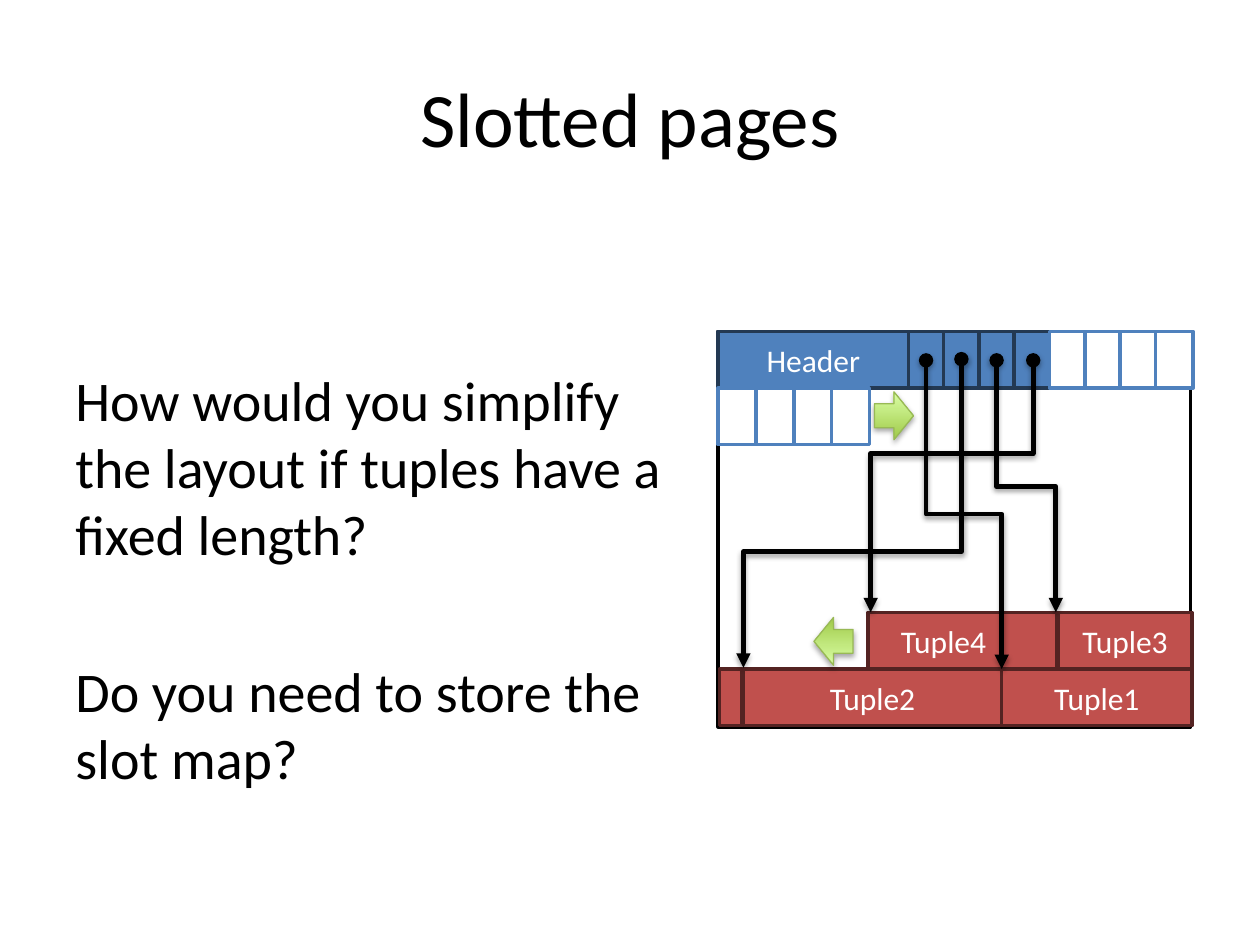
from lxml.etree import SubElement
from pptx import Presentation
from pptx.dml.color import RGBColor
from pptx.enum.shapes import MSO_CONNECTOR as Connector, MSO_SHAPE as Shape
from pptx.enum.text import MSO_ANCHOR as Anchor, PP_ALIGN as Align
from pptx.oxml.ns import qn
from pptx.util import Inches, Pt

COLORS = {
    "black": "000000", "white": "FFFFFF",
    "blue": "4F81BD", "navy": "233953",
    "red": "C0504D", "maroon": "542322",
    "green": "A0CA4A", "lime": "DAFFA5", "olive": "98B955",
}
FONT = "Calibri"
TITLE = "Slotted pages"
QUESTIONS = [
    "How would you simplify the layout if tuples have a fixed length?",
    "Do you need to store the slot map?",
]

PAGE_LEFT, PAGE_TOP, PAGE_WIDTH, PAGE_HEIGHT = 5.7, 2.63, 3.75, 3.14
ROW = 0.45
SLOT_WIDTH = 0.3
SLOT_ROWS = [
    (7.21, PAGE_TOP, 0.28, ["used"] * 4 + ["free"] * 4),
    (PAGE_LEFT, PAGE_TOP + ROW, 0.3, ["free"] * 4),
]
SLOT_STYLES = {"used": ("blue", "navy"), "free": ("white", "blue")}
LAST_ROW = 5.31
TUPLES = [
    ("Tuple1", 7.95, LAST_ROW, 1.51),
    ("Tuple2", 5.9, LAST_ROW, 2.05),
    ("Tuple3", 8.4, LAST_ROW - ROW, 1.06),
    ("Tuple4", 6.89, LAST_ROW - ROW, 1.5),
    ("", 5.71, LAST_ROW, 0.18),
]
POINTERS = [
    ((7.35, 2.86), 4.08, (7.95, 5.31)),
    ((7.63, 2.85), 4.38, (5.9, 5.3)),
    ((7.91, 2.86), 3.86, (8.38, 4.86)),
    ((8.2, 2.86), 3.6, (6.91, 4.86)),
]
GROWTH_ARROWS = [(6.94, 3.11, 0), (6.46, 4.9, 180)]


def color(name):
    return RGBColor.from_string(COLORS[name])


def style_text(paragraph, size, name, align):
    paragraph.alignment = align
    for run in paragraph.runs:
        run.font.name = FONT
        run.font.size = Pt(size)
        run.font.color.rgb = color(name)


def add_text(slide, place, paragraphs, size, anchor, align, gap=0):
    frame = slide.shapes.add_textbox(*map(Inches, place)).text_frame
    frame.word_wrap = True
    frame.vertical_anchor = anchor
    frame.text = "\n".join(paragraphs)
    for index, paragraph in enumerate(frame.paragraphs):
        style_text(paragraph, size, "black", align)
        if index:
            paragraph.space_before = Pt(gap)


def add_box(slide, left, top, width, height, fill, line, label=""):
    box = slide.shapes.add_shape(Shape.RECTANGLE, *map(Inches, (left, top, width, height)))
    box.shadow.inherit = False
    box.fill.solid()
    box.fill.fore_color.rgb = color(fill)
    box.line.color.rgb = color(line)
    box.line.width = Pt(2)
    if label:
        box.text_frame.text = label
        box.text_frame.vertical_anchor = Anchor.MIDDLE
        style_text(box.text_frame.paragraphs[0], 18, "white", Align.CENTER)
    return box


def add_shadow(properties, opacity, distance):
    effects = SubElement(properties, qn("a:effectLst"))
    shadow = SubElement(effects, qn("a:outerShdw"), blurRad=str(Pt(3.1)),
                        dist=str(Pt(distance)), dir="5400000", rotWithShape="0")
    shade = SubElement(shadow, qn("a:srgbClr"), val=COLORS["black"])
    SubElement(shade, qn("a:alpha"), val=str(opacity * 1000))


def add_pointer(slide, start, bend, end):
    (x1, y1), (x2, y2) = start, end
    length, span = y2 - y1, abs(x2 - x1)
    left, right = (x1 + x2 - length) / 2, (x1 + x2 + length) / 2
    top, bottom = (y1 + y2 - span) / 2, (y1 + y2 + span) / 2
    if x2 > x1:
        left, right, turn = right, left, 270
    else:
        turn = 90
    pointer = slide.shapes.add_connector(
        Connector.ELBOW, *map(Inches, (left, top, right, bottom)))
    pointer.line.color.rgb = color("black")
    pointer.line.width = Pt(2.75)
    properties = pointer._element.spPr
    properties.find(qn("a:xfrm")).set("rot", str(turn * 60000))
    guides = properties.find(qn("a:prstGeom")).find(qn("a:avLst"))
    SubElement(guides, qn("a:gd"), name="adj1",
               fmla=f"val {round((bend - y1) / length * 100000)}")
    outline = properties.find(qn("a:ln"))
    SubElement(outline, qn("a:headEnd"), type="oval")
    SubElement(outline, qn("a:tailEnd"), type="triangle")
    add_shadow(properties, 38, 1.6)


def add_growth_arrow(slide, left, top, rotation):
    arrow = slide.shapes.add_shape(
        Shape.RIGHT_ARROW, *map(Inches, (left, top, 0.31, 0.38)))
    arrow.rotation = rotation
    arrow.fill.gradient()
    arrow.fill.gradient_angle = 90
    for stop, name in zip(arrow.fill.gradient_stops, ("green", "lime")):
        stop.color.rgb = color(name)
    arrow.line.color.rgb = color("olive")
    arrow.line.width = Pt(0.75)
    add_shadow(arrow._element.spPr, 35, 1.8)


def main():
    deck = Presentation()
    deck.slide_width, deck.slide_height = Inches(10), Inches(7.5)
    slide = deck.slides.add_slide(deck.slide_layouts[6])

    add_text(slide, (0.5, 0.3, 9, 1.25), [TITLE], 44, Anchor.MIDDLE, Align.CENTER)
    add_text(slide, (0.5, 2.85, 5.07, 3.85), QUESTIONS, 32, Anchor.TOP, Align.LEFT, gap=51)

    add_box(slide, PAGE_LEFT, PAGE_TOP, PAGE_WIDTH, PAGE_HEIGHT, "white", "black")
    add_box(slide, PAGE_LEFT, PAGE_TOP, 1.51, ROW, "blue", "navy", "Header")
    for left, top, step, slots in SLOT_ROWS:
        for index, state in enumerate(slots):
            add_box(slide, left + index * step, top, SLOT_WIDTH, ROW, *SLOT_STYLES[state])
    for label, left, top, width in TUPLES:
        box = add_box(slide, left, top, width, ROW, "red", "maroon", label)
        if label == "Tuple4":
            box.text_frame.margin_left = Inches(0.26)
            box.text_frame.paragraphs[0].alignment = Align.LEFT
    for start, bend, end in POINTERS:
        add_pointer(slide, start, bend, end)
    for left, top, rotation in GROWTH_ARROWS:
        add_growth_arrow(slide, left, top, rotation)

    deck.save("out.pptx")


if __name__ == "__main__":
    main()
